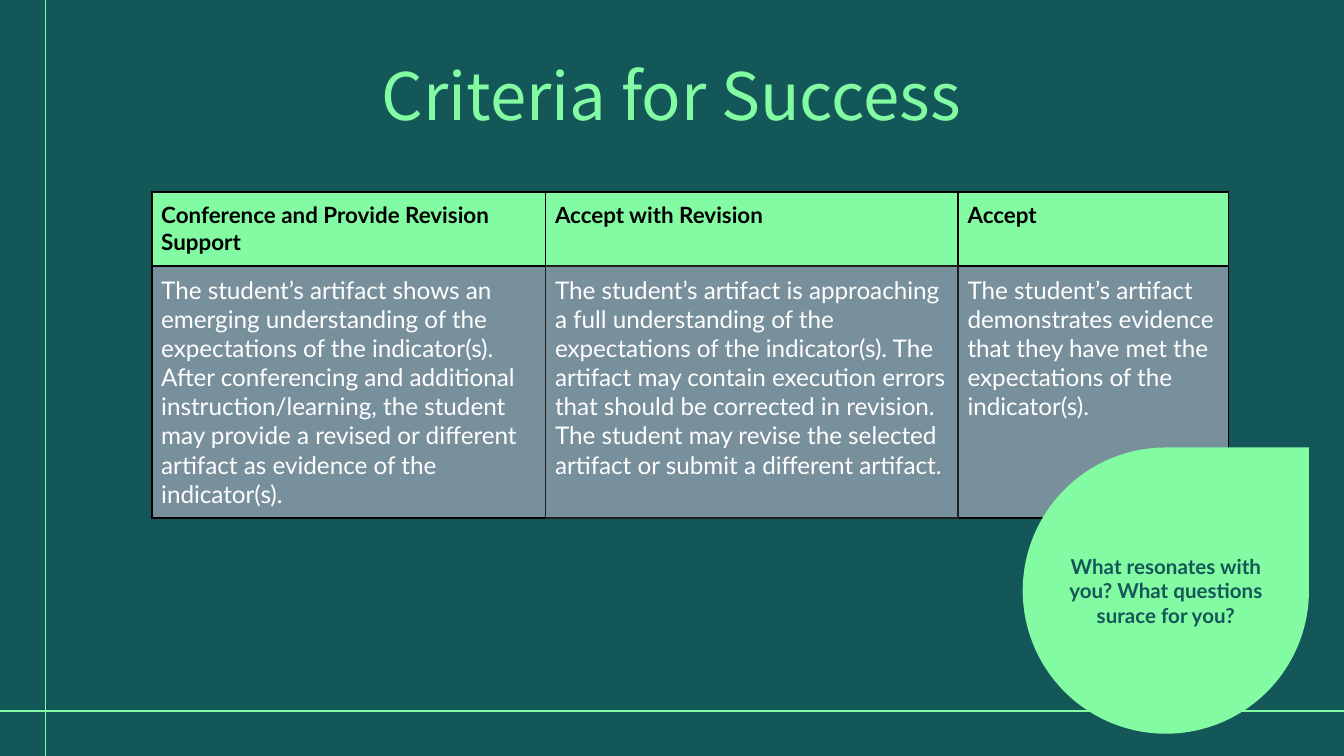
from lxml import etree
from pptx import Presentation
from pptx.dml.color import RGBColor
from pptx.enum.shapes import MSO_AUTO_SHAPE_TYPE as Shape, MSO_CONNECTOR as Link
from pptx.enum.text import MSO_AUTO_SIZE as Fit, PP_ALIGN as Align
from pptx.oxml import parse_xml
from pptx.oxml.ns import nsdecls, qn
from pptx.util import Inches, Pt

TEAL = RGBColor(0x14, 0x57, 0x58)
MINT = RGBColor(0x83, 0xFB, 0xA3)
SLATE = RGBColor(0x78, 0x90, 0x9C)
BLACK = RGBColor(0, 0, 0)
DARK = RGBColor(0x1F, 0x1F, 0x1F)
WHITE = RGBColor(0xFF, 0xFF, 0xFF)

WIDE = 10
HIGH = WIDE * 9 / 16
TITLE = "Criteria for Success"
PROMPT = "What resonates with you? What questions surace for you?"
LEVELS = [
    ("Conference and Provide Revision Support", 2.93,
     "The student’s artifact shows an emerging understanding of the expectations "
     "of the indicator(s). After conferencing and additional instruction/learning, "
     "the student may provide a revised or different artifact as evidence of the "
     "indicator(s)."),
    ("Accept with Revision", 3.07,
     "The student’s artifact is approaching a full understanding of the expectations "
     "of the indicator(s). The artifact may contain execution errors that should be "
     "corrected in revision. The student may revise the selected artifact or submit "
     "a different artifact."),
    ("Accept", 2.01,
     "The student’s artifact demonstrates evidence that they have met the "
     "expectations of the indicator(s)."),
]
ROWS = [(0.55, 12, True, BLACK, MINT), (1.79, 13, False, WHITE, SLATE)]
RULES = [(0.34, 0, 0.34, HIGH), (WIDE, 5.29, 0, 5.29)]
SOFT = {(0, 1): "B", (1, 0): "R", (1, 1): "LRTB", (1, 2): "L"}


def style(para, face, size, color, bold=False):
    font = para.font
    font.name, font.size, font.bold = face, Pt(size), bold
    font.color.rgb = color


def add_rule(slide, ends):
    rule = slide.shapes.add_connector(Link.STRAIGHT, *map(Inches, ends))
    rule.line.color.rgb = MINT
    rule.line.width = Pt(0.75)
    etree.SubElement(rule._element.spPr, qn("a:effectLst"))


def add_label(slide, box, text, *look, after=0):
    frame = slide.shapes.add_textbox(*map(Inches, box)).text_frame
    frame.margin_left = frame.margin_right = 0
    frame.margin_top = frame.margin_bottom = 0
    frame.word_wrap = True
    frame.auto_size = Fit.SHAPE_TO_FIT_TEXT
    para = frame.paragraphs[0]
    para.text = text
    para.alignment = Align.CENTER
    para.space_after = Pt(after)
    style(para, *look)


def add_edges(cell, soft):
    props = cell._tc.get_or_add_tcPr()
    for spot, side in enumerate("LRTB"):
        color = DARK if side in soft else BLACK
        props.insert(spot, parse_xml(
            f'<a:ln{side} {nsdecls("a")} w="{Pt(1)}"><a:solidFill>'
            f'<a:srgbClr val="{color}"/></a:solidFill></a:ln{side}>'))


def add_grid(slide):
    width = sum(level[1] for level in LEVELS)
    height = sum(row[0] for row in ROWS)
    box = map(Inches, (1.13, 1.43, width, height))
    grid = slide.shapes.add_table(len(ROWS), len(LEVELS), *box).table
    for c, (head, span, body) in enumerate(LEVELS):
        grid.columns[c].width = Inches(span)
        for r, (tall, size, bold, color, fill) in enumerate(ROWS):
            grid.rows[r].height = Inches(tall)
            cell = grid.cell(r, c)
            cell.margin_left = cell.margin_right = Inches(0.07)
            cell.margin_top = cell.margin_bottom = Inches(0.07)
            cell.text = (head, body)[r]
            style(cell.text_frame.paragraphs[0], "Lato", size, color, bold)
            cell.fill.solid()
            cell.fill.fore_color.rgb = fill
            add_edges(cell, SOFT.get((r, c), ""))


def add_drop(slide):
    drop = slide.shapes.add_shape(Shape.TEAR, *map(Inches, (7.61, 3.33, 2.13, 2.13)))
    drop.shadow.inherit = False
    drop.fill.solid()
    drop.fill.fore_color.rgb = MINT
    drop.line.fill.background()


def main():
    deck = Presentation()
    deck.slide_width, deck.slide_height = Inches(WIDE), Inches(HIGH)
    slide = deck.slides.add_slide(deck.slide_layouts[6])
    slide.background.fill.solid()
    slide.background.fill.fore_color.rgb = TEAL
    for ends in RULES:
        add_rule(slide, ends)
    add_label(slide, (1.76, 0.41, 6.47, 0.59), TITLE,
              "Noto Sans CJK KR", 35, MINT, after=10)
    add_grid(slide)
    add_drop(slide)
    add_label(slide, (7.82, 4.12, 1.71, 0.56), PROMPT, "Lato", 11, TEAL, True)
    deck.save("out.pptx")


if __name__ == "__main__":
    main()
